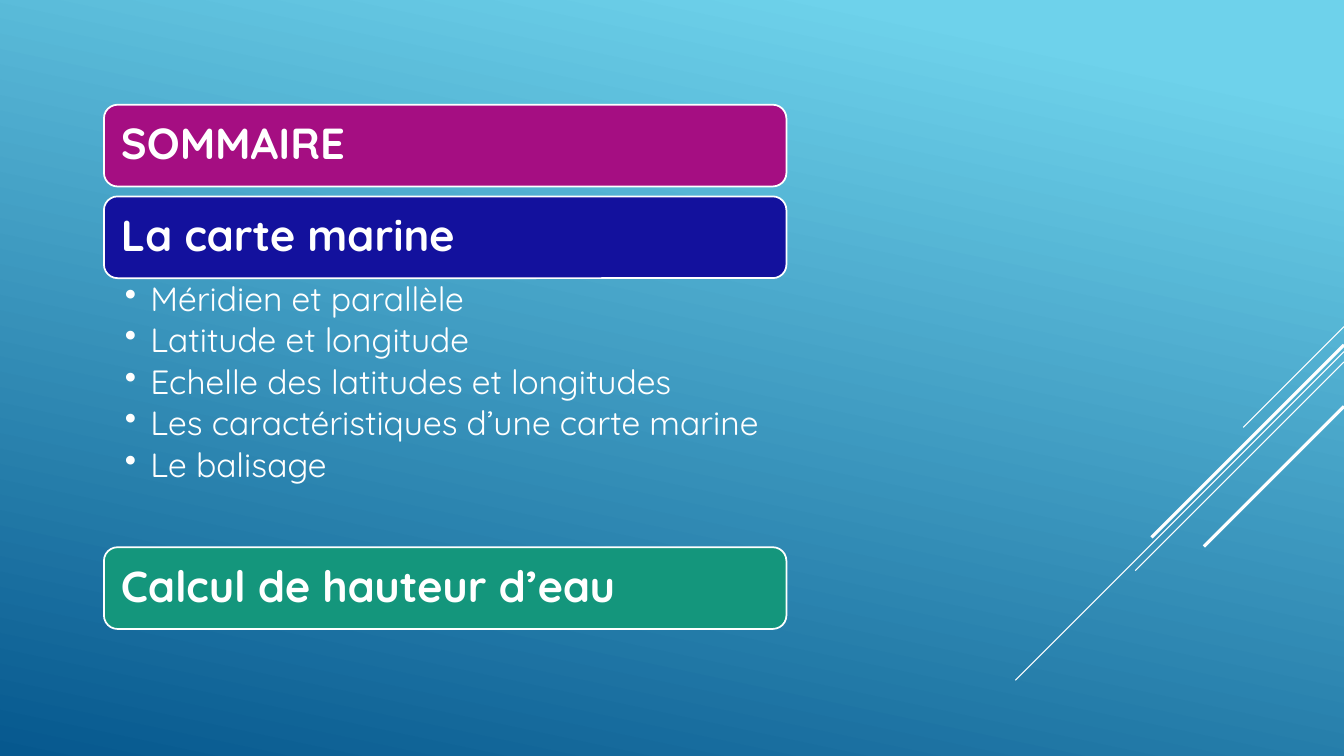
from dataclasses import dataclass

import lxml.etree
import pptx
import pptx.dml.color
import pptx.enum.shapes
import pptx.enum.text
import pptx.oxml.ns
import pptx.shapes.autoshape
import pptx.slide
import pptx.text.text
import pptx.util

Cm = pptx.util.Cm
Pt = pptx.util.Pt
RGB = pptx.dml.color.RGBColor
SHAPE = pptx.enum.shapes.MSO_SHAPE
ANCHOR = pptx.enum.text.MSO_ANCHOR
ALIGN = pptx.enum.text.PP_ALIGN
qn = pptx.oxml.ns.qn


@dataclass(frozen=True)
class Theme:
    font: str = "Quicksand"
    white: RGB = RGB(0xFF, 0xFF, 0xFF)
    sky: RGB = RGB(0x6E, 0xD2, 0xEB)
    sea: RGB = RGB(0x06, 0x58, 0x8E)
    purple: RGB = RGB(0xA5, 0x0E, 0x82)
    navy: RGB = RGB(0x13, 0x11, 0x9D)
    green: RGB = RGB(0x14, 0x96, 0x7C)
    heading: float = 31
    body: float = 24
    thin: float = 0.75
    thick: float = 2.25
    outline: float = 1.25


@dataclass(frozen=True)
class Bar:
    title: str
    color: RGB
    top: float


@dataclass(frozen=True)
class Ray:
    top: float
    run: float
    weight: float


THEME = Theme()
WIDTH, HEIGHT = 33.87, 19.05
LEFT, BAR_WIDTH, BAR_HEIGHT = 2.62, 17.2, 2.06
BAR_GAP, TOPICS_HEIGHT = 0.25, 6.78
FIRST_TOP = 2.64
SECOND_TOP = FIRST_TOP + BAR_HEIGHT + BAR_GAP
TOPICS_TOP = SECOND_TOP + BAR_HEIGHT

BARS = [
    Bar("SOMMAIRE", THEME.purple, FIRST_TOP),
    Bar("La carte marine", THEME.navy, SECOND_TOP),
    Bar("Calcul de hauteur d’eau", THEME.green, TOPICS_TOP + TOPICS_HEIGHT),
]
TOPICS = [
    "Méridien et parallèle",
    "Latitude et longitude",
    "Echelle des latitudes et longitudes",
    "Les caractéristiques d’une carte marine",
    "Le balisage",
]
RAYS = [
    Ray(8.23, 2.54, THEME.thin),
    Ray(8.86, 8.28, THEME.thin),
    Ray(9.12, 5.26, THEME.thin),
    Ray(8.69, 4.85, THEME.thick),
    Ray(10.24, 3.53, THEME.thick),
]


def set_insets(tf: pptx.text.text.TextFrame, left: float, top: float,
               right: float, bottom: float) -> None:
    tf.word_wrap = True
    tf.margin_left, tf.margin_top = Cm(left), Cm(top)
    tf.margin_right, tf.margin_bottom = Cm(right), Cm(bottom)


def write(p: pptx.text.text._Paragraph, text: str, size: float,
          bold: bool = False) -> None:
    p.alignment = ALIGN.LEFT
    p.line_spacing = 0.9
    r = p.add_run()
    r.text = text
    r.font.name = THEME.font
    r.font.size = Pt(size)
    r.font.bold = bold
    r.font.color.rgb = THEME.white


def add_bullet(p: pptx.text.text._Paragraph) -> None:
    pPr = p._p.get_or_add_pPr()
    pPr.set("marL", str(Cm(0.64)))
    pPr.set("indent", str(-Cm(0.64)))
    lxml.etree.SubElement(pPr, qn("a:buChar")).set("char", "•")


def draw_backdrop(s: pptx.slide.Slide) -> None:
    sp = s.shapes.add_shape(SHAPE.RECTANGLE, 0, 0, Cm(WIDTH), Cm(HEIGHT))
    sp.shadow.inherit = False
    sp.line.fill.background()
    sp.fill.gradient()
    sp.fill.gradient_angle = 258
    stops = [(0.1, THEME.sky), (1, THEME.sea)]
    for stop, (position, color) in zip(sp.fill.gradient_stops, stops):
        stop.position = position
        stop.color.rgb = color


def draw_ray(s: pptx.slide.Slide, ray: Ray) -> None:
    line = s.shapes.add_connector(
        pptx.enum.shapes.MSO_CONNECTOR.STRAIGHT, Cm(WIDTH), Cm(ray.top),
        Cm(WIDTH - ray.run), Cm(ray.top + ray.run))
    line.line.color.rgb = THEME.white
    line.line.width = Pt(ray.weight)
    lxml.etree.SubElement(line._element.spPr, qn("a:effectLst"))


def draw_bar(s: pptx.slide.Slide, bar: Bar) -> None:
    sp = s.shapes.add_shape(SHAPE.ROUNDED_RECTANGLE, Cm(LEFT), Cm(bar.top),
                            Cm(BAR_WIDTH), Cm(BAR_HEIGHT))
    sp.shadow.inherit = False
    sp.fill.solid()
    sp.fill.fore_color.rgb = bar.color
    sp.line.color.rgb = THEME.white
    sp.line.width = Pt(THEME.outline)
    tf = sp.text_frame
    set_insets(tf, 0.33, 0.33, 0.33, 0.33)
    tf.vertical_anchor = ANCHOR.MIDDLE
    write(tf.paragraphs[0], bar.title, THEME.heading, bold=True)


def draw_topics(s: pptx.slide.Slide, topics: list[str]) -> None:
    sp = s.shapes.add_textbox(Cm(LEFT), Cm(TOPICS_TOP),
                              Cm(BAR_WIDTH), Cm(TOPICS_HEIGHT))
    tf = sp.text_frame
    set_insets(tf, 0.53, 0.1, 0.61, 0.1)
    for i, topic in enumerate(topics):
        p = tf.add_paragraph() if i else tf.paragraphs[0]
        write(p, topic, THEME.body)
        p.space_after = Pt(3.75)
        add_bullet(p)


def main() -> None:
    prs = pptx.Presentation()
    prs.slide_width, prs.slide_height = Cm(WIDTH), Cm(HEIGHT)
    s = prs.slides.add_slide(prs.slide_layouts[6])
    draw_backdrop(s)
    for ray in RAYS:
        draw_ray(s, ray)
    for bar in BARS:
        draw_bar(s, bar)
    draw_topics(s, TOPICS)
    prs.save("out.pptx")


if __name__ == "__main__":
    main()
